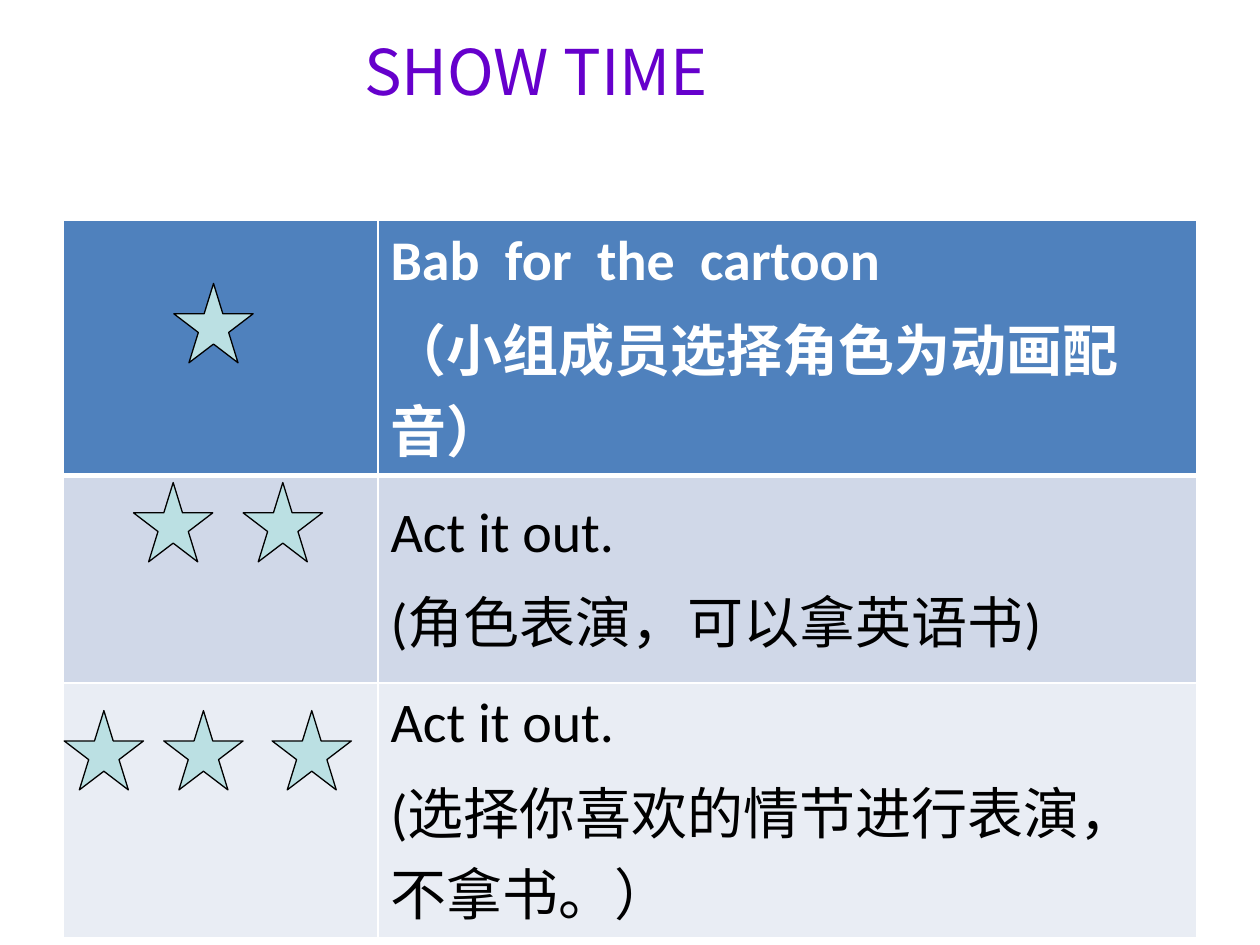
"""Build the SHOW TIME slide: three star levels and the task for each."""
from dataclasses import dataclass
from typing import Any

from lxml.etree import SubElement, _Element as Element
from pptx import Presentation
from pptx.dml.color import RGBColor as Rgb
from pptx.enum.shapes import MSO_SHAPE as Shape
from pptx.enum.text import MSO_ANCHOR as Anchor, PP_ALIGN as Align
from pptx.oxml.ns import qn
from pptx.slide import Slide
from pptx.util import Emu, Pt

EMU_PER_PX = 9144


@dataclass(frozen=True)
class Theme:
    header: str = "4F81BD"
    band: str = "D0D8E8"
    pale: str = "E9EDF4"
    white: str = "FFFFFF"
    black: str = "000000"
    star: str = "BBE0E3"
    title_stops: tuple[str, str] = ("6600CC", "CC00CC")
    title_edge: str = "9999FF"
    title_font: str = "Noto Sans CJK SC"
    task_font: str = "Calibri"
    title_size: int = 36
    task_size: int = 32
    fine_line: float = 0.75
    rule: int = 1
    header_rule: int = 3


THEME = Theme()


@dataclass(frozen=True)
class Level:
    task: str
    hint: str
    height: int
    fill: str
    ink: str
    bold: bool
    rule_above: int
    rule_below: int
    star_top: int
    star_lefts: tuple[int, ...]


LEVELS = (
    Level("Bab  for  the  cartoon", "（小组成员选择角色为动画配音）", 165,
          THEME.header, THEME.white, True, THEME.rule, THEME.header_rule, 225, (138,)),
    Level("Act it out.", "(角色表演，可以拿英语书)", 165,
          THEME.band, THEME.black, False, THEME.header_rule, THEME.rule, 383, (106, 193)),
    Level("Act it out.", "(选择你喜欢的情节进行表演，不拿书。）", 181,
          THEME.pale, THEME.black, False, THEME.rule, THEME.rule, 564, (51, 130, 216)),
)
COLUMN_WIDTHS = (250, 650)
TABLE_LEFT, TABLE_TOP = 50, 175
STAR_SIZE = 63


def px(length: int) -> Emu:
    """Turn slide px into EMU."""
    return Emu(length * EMU_PER_PX)


def apply(target: Any, values: dict[str, Any]) -> None:
    """Set each named attribute on the target."""
    for name, value in values.items():
        setattr(target, name, value)


def add_line(parent: Element, tag: str, color: str, width: float, position: int) -> None:
    """Put a solid line element at a position in its parent."""
    line = SubElement(parent, qn(tag), w=str(Pt(width)))
    SubElement(SubElement(line, qn("a:solidFill")), qn("a:srgbClr"), val=color)
    parent.insert(position, line)


def add_title(slide: Slide) -> None:
    """Draw the heading with its gradient letters."""
    frame = slide.shapes.add_textbox(px(75), px(21), px(701), px(134)).text_frame
    frame.word_wrap = False
    heading = frame.paragraphs[0]
    heading.alignment = Align.CENTER
    letters = heading.add_run()
    letters.text = "SHOW TIME"
    apply(letters.font, {"size": Pt(THEME.title_size), "name": THEME.title_font})
    fill = letters.font.fill
    fill.gradient()
    fill.gradient_angle = 270
    for stop, color in zip(fill.gradient_stops, THEME.title_stops):
        stop.color.rgb = Rgb.from_string(color)
    add_line(letters.font._element, "a:ln", THEME.title_edge, THEME.fine_line, 0)


def format_cell(cell: Any, level: Level) -> None:
    """Give a cell its fill and rules."""
    cell.fill.solid()
    cell.fill.fore_color.rgb = Rgb.from_string(level.fill)
    rules = {"a:lnL": THEME.rule, "a:lnR": THEME.rule,
             "a:lnT": level.rule_above, "a:lnB": level.rule_below}
    for position, (tag, width) in enumerate(rules.items()):
        add_line(cell._tc.get_or_add_tcPr(), tag, THEME.white, width, position)


def write_task(cell: Any, level: Level) -> None:
    """Write the task and its hint in a cell."""
    cell.vertical_anchor = Anchor.MIDDLE
    cell.text = f"{level.task}\n{level.hint}"
    task, hint = cell.text_frame.paragraphs
    hint.space_before = Pt(THEME.task_size * 0.2)
    for paragraph in (task, hint):
        font = paragraph.runs[0].font
        apply(font, {"size": Pt(THEME.task_size), "name": THEME.task_font, "bold": level.bold})
        font.color.rgb = Rgb.from_string(level.ink)


def add_levels(slide: Slide) -> None:
    """Draw the table with one row per level."""
    height = sum(level.height for level in LEVELS)
    table = slide.shapes.add_table(
        len(LEVELS), len(COLUMN_WIDTHS), px(TABLE_LEFT), px(TABLE_TOP),
        px(sum(COLUMN_WIDTHS)), px(height)).table
    table.horz_banding = False
    for column, width in zip(table.columns, COLUMN_WIDTHS):
        column.width = px(width)
    for row, level in zip(table.rows, LEVELS):
        row.height = px(level.height)
        for cell in row.cells:
            format_cell(cell, level)
        write_task(row.cells[1], level)


def add_star(slide: Slide, left: int, top: int) -> None:
    """Draw one star."""
    star = slide.shapes.add_shape(
        Shape.STAR_5_POINT, px(left), px(top), px(STAR_SIZE), px(STAR_SIZE))
    star.shadow.inherit = False
    star.fill.solid()
    star.fill.fore_color.rgb = Rgb.from_string(THEME.star)
    star.line.color.rgb = Rgb.from_string(THEME.black)
    star.line.width = Pt(THEME.fine_line)


def main() -> None:
    """Build and save the slide."""
    deck = Presentation()
    apply(deck, {"slide_width": px(1000), "slide_height": px(750)})
    slide = deck.slides.add_slide(deck.slide_layouts[6])
    add_levels(slide)
    add_title(slide)
    for level in LEVELS:
        for left in level.star_lefts:
            add_star(slide, left, level.star_top)
    deck.save("out.pptx")


if __name__ == "__main__":
    main()
